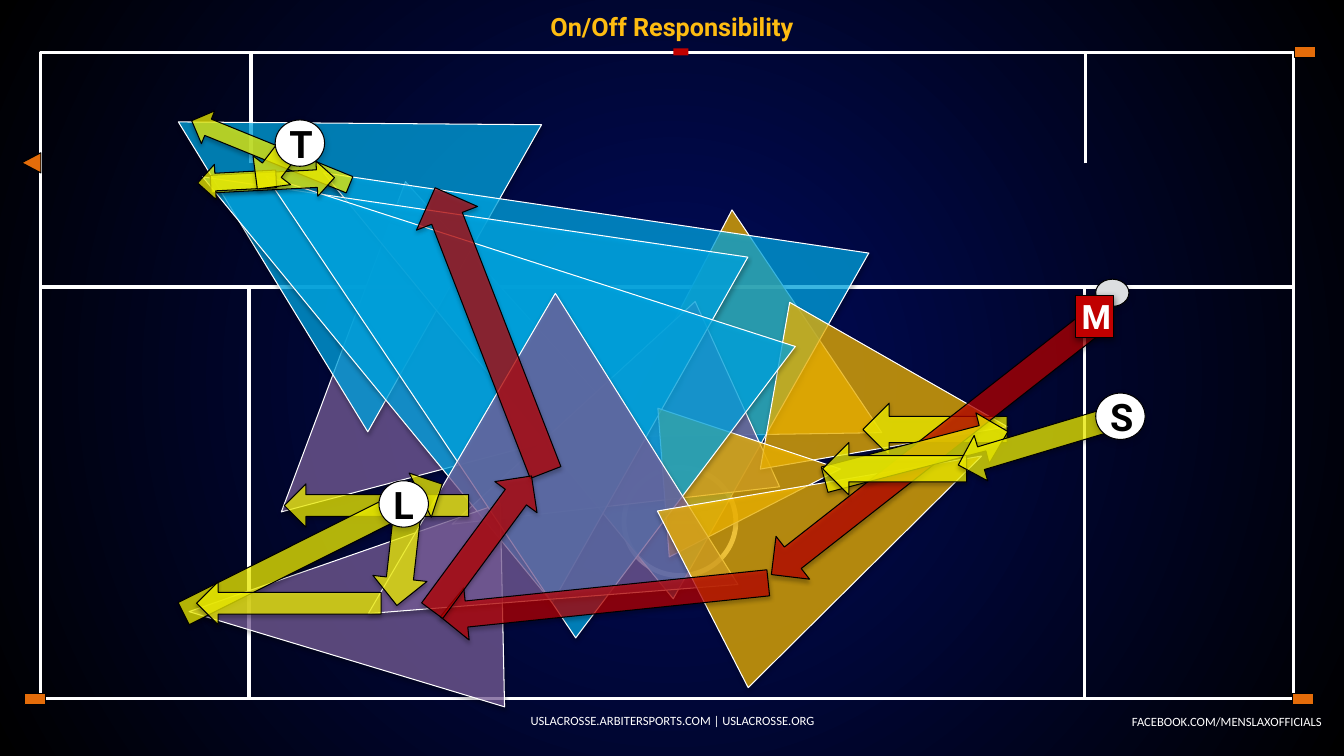
"""Build the lacrosse slide on officials' on/off responsibility."""
from dataclasses import dataclass

from lxml import etree
from pptx import Presentation
from pptx import util as u
from pptx.dml.color import RGBColor
from pptx.enum import shapes, text
from pptx.oxml import parse_xml
from pptx.oxml.ns import nsdecls, qn

COLOURS = {
    "navy": "000B5F", "black": "000000", "white": "FFFFFF", "red": "C00000",
    "orange": "E46C0A", "purple": "8064A2", "gold": "FFC000", "cyan": "00B0F0",
    "yellow": "FFFF00", "grey": "DCDEE0", "title": "FEBC11",
}
ROWS = 75
CELL = u.Inches(7.5) / ROWS
COLUMNS = 133.33
RECT = shapes.MSO_SHAPE.RECTANGLE
OVAL = shapes.MSO_SHAPE.OVAL
TRIANGLE = shapes.MSO_SHAPE.ISOSCELES_TRIANGLE
ARROW = shapes.MSO_SHAPE.RIGHT_ARROW
CENTER, RIGHT = text.PP_ALIGN.CENTER, text.PP_ALIGN.RIGHT


@dataclass(frozen=True)
class Shadow:
    opacity: int
    blur: float
    distance: float


SOFT = Shadow(35, 3.1, 1.8)
BADGE = Shadow(20, 5, 2)
STRONG = Shadow(50, 5, 2)


@dataclass(frozen=True)
class Mark:
    kind: shapes.MSO_SHAPE
    x: float
    y: float
    w: float
    h: float
    fill: str | None = None
    turn: float = 0
    line: str | None = "black"
    weight: float = 0.75
    opacity: int = 100
    shadow: Shadow | None = None


@dataclass(frozen=True)
class Label:
    words: str
    size: float
    font: str
    colour: str
    bold: bool = False
    align: text.PP_ALIGN = CENTER


@dataclass(frozen=True)
class Official:
    mark: Mark
    label: Label
    inset: float


@dataclass(frozen=True)
class Caption:
    x: float
    y: float
    w: float
    h: float
    label: Label
    wrap: bool = True


def field_line(kind: shapes.MSO_SHAPE, x: float, y: float, w: float, h: float,
               weight: float = 2.25) -> Mark:
    """Describe an unfilled white field marking."""
    return Mark(kind, x, y, w, h, line="white", weight=weight)


def zone(fill: str, x: float, y: float, w: float, h: float, turn: float) -> Mark:
    """Describe a translucent triangle of coverage."""
    return Mark(TRIANGLE, x, y, w, h, fill, turn, "white", opacity=70, shadow=SOFT)


def move(fill: str, x: float, y: float, w: float, h: float, turn: float) -> Mark:
    """Describe a translucent arrow of movement."""
    return Mark(ARROW, x, y, w, h, fill, turn, opacity=70, shadow=SOFT)


def badge(letter: str, x: float, y: float) -> Official:
    """Describe a round official's badge."""
    return Official(Mark(OVAL, x, y, 4.9, 4.6, "white", shadow=BADGE),
                    Label(letter, 27, "Roboto", "black", True), 0.7)


FIELD = [
    field_line(RECT, 107.6, 28.4, 20.7, 40.9),
    field_line(RECT, 24.7, 28.4, 82.9, 40.9),
    field_line(RECT, 4, 28.4, 20.7, 40.9),
    field_line(OVAL, 61.9, 46.4, 11.1, 10.7, 3.5),
    field_line(RECT, 4, 5.2, 124.3, 23.3),
    Mark(RECT, 66.8, 4.8, 1.5, 0.7, "red", line=None),
    Mark(RECT, 128.4, 4.6, 2.1, 1.1, "orange"),
    Mark(TRIANGLE, 2.1, 15.2, 2, 1.9, "orange", 270),
    Mark(RECT, 128.2, 68.8, 2.1, 1.1, "orange"),
    Mark(RECT, 2.4, 68.8, 2.1, 1.1, "orange"),
]
FIELD_TICKS = [(65.7, 51.8, 69.3, 51.8), (24.9, 16.2, 24.9, 5.2), (107.7, 16.2, 107.7, 5.2)]
ZONES = [
    zone("purple", 23.4, 24.8, 32.1, 31.1, 227.9),
    zone("gold", 64.4, 25.8, 25.4, 23.4, 117.6),
    zone("cyan", 13.9, 4.1, 35, 31.5, 299.5),
    zone("cyan", 34.6, 4.2, 39.4, 51, 299.5),
    zone("purple", 48.9, 30, 20.2, 31.1, 245.5),
    zone("gold", 80, 28.6, 16.8, 23.4, 100),
    zone("cyan", 22.6, 4.6, 39.4, 51, 299.5),
    zone("purple", 24.2, 44.8, 20.2, 31.1, 268.8),
    zone("gold", 67.2, 38.4, 14.8, 17.6, 85.6),
    zone("cyan", 29.1, 7.1, 36.2, 52.1, 307),
    zone("purple", 33.3, 35.9, 34.1, 32.6, 237.9),
    zone("gold", 73.7, 36.8, 19.7, 31.1, 62.8),
]
MOVES = [
    move("yellow", 28.2, 48, 18.3, 4.3, 180),
    move("yellow", 85.6, 40, 14.3, 5.2, 180),
    move("yellow", 18.4, 13.4, 16.9, 3.5, 202.1),
    move("red", 33.5, 29.5, 30.3, 6.5, 248.8),
    move("red", 72.1, 41.5, 41.5, 5.4, 141.9),
    move("red", 43.6, 56.9, 32.7, 5.2, 174.1),
    move("red", 39.5, 51.3, 16.6, 5.2, 306.4),
    move("yellow", 20.9, 16.2, 12.3, 3.5, 357),
    move("yellow", 16.7, 52, 28.7, 4.9, 333.4),
    move("yellow", 81.5, 42.6, 18.8, 5.2, 345.3),
    move("yellow", 19.6, 16.2, 7.8, 3.5, 177),
    move("yellow", 19.5, 57.7, 18.3, 4.3, 180),
    move("yellow", 81.6, 43.9, 14.3, 5.2, 180),
    move("yellow", 24.4, 14.1, 5.8, 4.7, 127.5),
    move("yellow", 35.2, 52.7, 9.4, 5.4, 96.4),
    move("yellow", 94.7, 41.3, 17.3, 4.7, 163.3),
]
HEAD = Mark(OVAL, 108.7, 27.7, 3.3, 2.7, "grey", shadow=BADGE)
OFFICIALS = [
    badge("L", 37.6, 47.7),
    badge("S", 108.7, 39),
    badge("T", 27.3, 11.9),
    Official(Mark(RECT, 106.7, 29.3, 3.8, 4.2, "red", shadow=STRONG),
             Label("M", 24, "Roboto", "white", True), 0.6),
]
CAPTIONS = [
    Caption(0, 0.5, COLUMNS, 4.2, Label("On/Off Responsibility", 18, "Roboto", "title", True)),
    Caption(110.9, 70.3, 21.2, 2.5,
            Label("FACEBOOK.COM/MENSLAXOFFICIALS", 9, "Calibri", "white", align=RIGHT), False),
    Caption(45.6, 69.5, 42.2, 4,
            Label("USLACROSSE.ARBITERSPORTS.COM | USLACROSSE.ORG", 9, "Calibri", "white")),
]


def cells(*counts: float) -> list[u.Emu]:
    """Turn grid cells into lengths."""
    return [u.Emu(round(n * CELL)) for n in counts]


def rgb(name: str) -> RGBColor:
    """Look up a named colour."""
    return RGBColor.from_string(COLOURS[name])


def paint_background(s) -> None:
    """Fill the slide with a radial navy-to-black gradient."""
    fill = s.background.fill
    fill.gradient()
    for stop, position, name in zip(fill.gradient_stops, (0, 1), ("navy", "black")):
        stop.position = position
        stop.color.rgb = rgb(name)
    grad = next(s.element.iter(qn("a:gradFill")))
    grad.replace(grad.find(qn("a:lin")), parse_xml(
        f'<a:path {nsdecls("a")} path="circle">'
        '<a:fillToRect l="50000" t="50000" r="50000" b="50000"/></a:path>'))


def draw_mark(s, m: Mark):
    """Draw one shape with its fill, line and shadow."""
    sp = s.shapes.add_shape(m.kind, *cells(m.x, m.y, m.w, m.h))
    sp.rotation = m.turn
    sp.shadow.inherit = False
    if m.fill:
        sp.fill.solid()
        sp.fill.fore_color.rgb = rgb(m.fill)
        if m.opacity < 100:
            colour = next(sp.element.spPr.iter(qn("a:srgbClr")))
            etree.SubElement(colour, qn("a:alpha"), val=str(m.opacity * 1000))
    else:
        sp.fill.background()
    if m.line:
        sp.line.color.rgb = rgb(m.line)
        sp.line.width = u.Pt(m.weight)
    else:
        sp.line.fill.background()
    if m.shadow:
        sp.element.spPr.find(qn("a:effectLst")).append(parse_xml(
            f'<a:outerShdw {nsdecls("a")} blurRad="{u.Pt(m.shadow.blur)}" '
            f'dist="{u.Pt(m.shadow.distance)}" dir="5400000" rotWithShape="0">'
            f'<a:srgbClr val="{COLOURS["black"]}"><a:alpha val="{m.shadow.opacity * 1000}"/>'
            '</a:srgbClr></a:outerShdw>'))
    return sp


def draw_tick(s, x1: float, y1: float, x2: float, y2: float) -> None:
    """Draw a straight white field line."""
    c = s.shapes.add_connector(shapes.MSO_CONNECTOR.STRAIGHT, *cells(x1, y1, x2, y2))
    c.line.color.rgb = rgb("white")
    c.line.width = u.Pt(2.25)
    etree.SubElement(c.element.spPr, qn("a:effectLst"))


def write(tf, label: Label, wrap: bool = True) -> None:
    """Put a label in the middle of a text frame."""
    tf.word_wrap = wrap
    tf.vertical_anchor = text.MSO_ANCHOR.MIDDLE
    p = tf.paragraphs[0]
    p.text, p.alignment = label.words, label.align
    p.font.name, p.font.size, p.font.bold = label.font, u.Pt(label.size), label.bold
    p.font.color.rgb = rgb(label.colour)


def main() -> None:
    """Build and save the slide."""
    prs = Presentation()
    prs.slide_width, prs.slide_height = cells(COLUMNS, ROWS)
    s = prs.slides.add_slide(prs.slide_layouts[6])
    paint_background(s)
    for m in FIELD:
        draw_mark(s, m)
    for tick in FIELD_TICKS:
        draw_tick(s, *tick)
    for m in [*ZONES, *MOVES, HEAD]:
        draw_mark(s, m)
    for o in OFFICIALS:
        tf = draw_mark(s, o.mark).text_frame
        tf.margin_left, tf.margin_top, tf.margin_right, tf.margin_bottom = cells(*[o.inset] * 4)
        write(tf, o.label)
    for c in CAPTIONS:
        write(s.shapes.add_textbox(*cells(c.x, c.y, c.w, c.h)).text_frame, c.label, c.wrap)
    prs.save("out.pptx")


if __name__ == "__main__":
    main()
